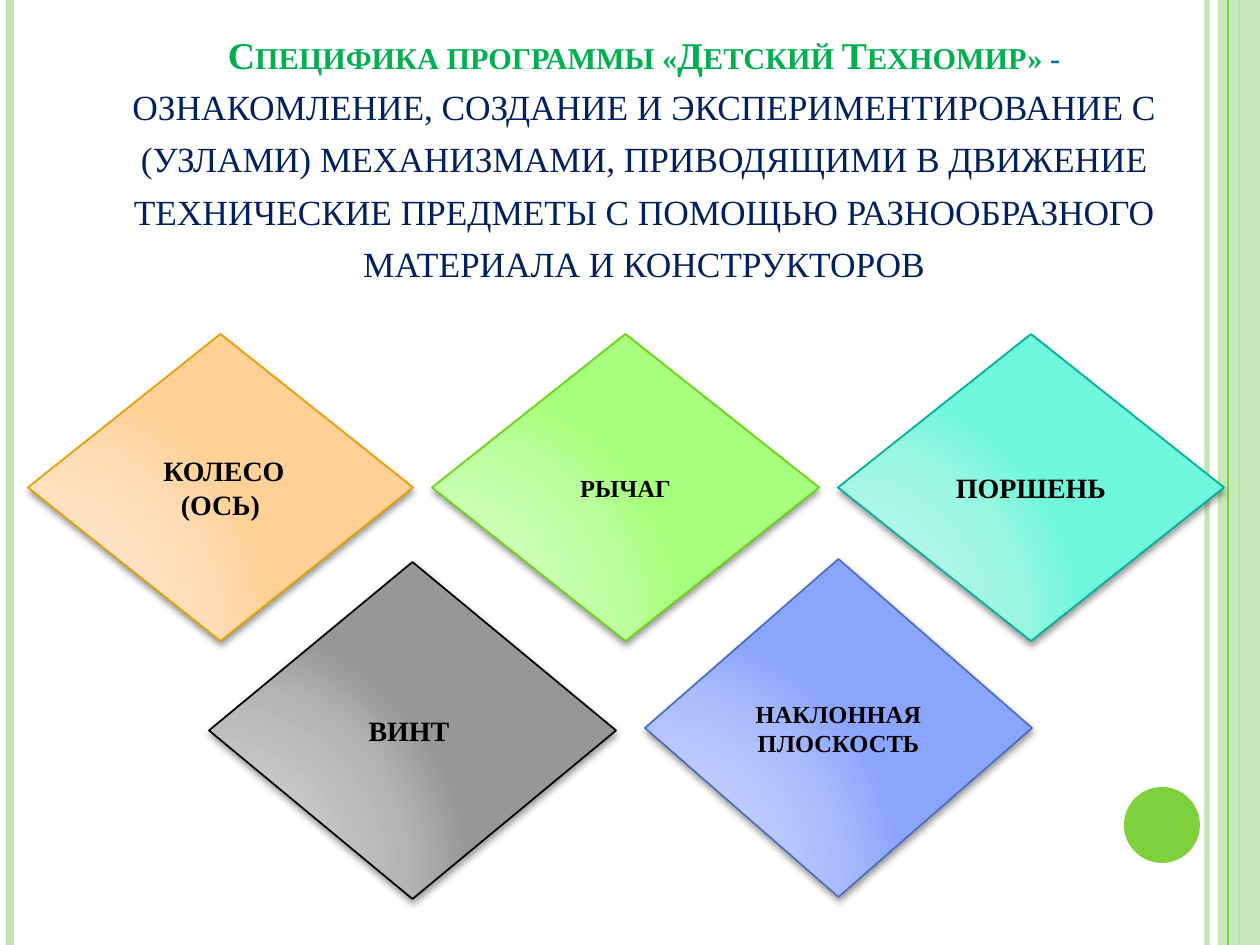
from lxml import etree
from pptx import Presentation
from pptx.dml.color import RGBColor as RGB
from pptx.enum.shapes import MSO_CONNECTOR as CONN, MSO_SHAPE as SHAPE
from pptx.enum.text import MSO_ANCHOR as ANCHOR, MSO_AUTO_SIZE as AUTO, PP_ALIGN as ALIGN
from pptx.oxml import parse_xml
from pptx.oxml.ns import nsdecls, qn
from pptx.util import Pt

PX = 914400 / 126
FONT = "Times New Roman"


def emu(*vals):
    return [round(v * PX) for v in vals]


def paint(color, code, alpha=None):
    """Set a colour format from a hex string, with opacity in percent."""
    color.rgb = RGB.from_string(code)
    if alpha:
        for clr in color._xFill.iter(qn("a:srgbClr")):
            etree.SubElement(clr, qn("a:alpha"), val=str(alpha * 1000))


prs = Presentation()
prs.slide_width, prs.slide_height = emu(1260, 945)
slide = prs.slides.add_slide(prs.slide_layouts[5])
shapes = slide.shapes

# Side stripes: x, colour, width in points, opacity
stripes = [(1207, "C0E5AF", 3, 93), (10, "C0E5AF", 4.5, None),
           (1239, "7FD13B", 1.5, None), (1228, "7FD13B", 0.75, None)]
for x, code, width, alpha in stripes:
    if x == 1228:  # the band lies under the last stripe only
        band = shapes.add_shape(SHAPE.RECTANGLE, *emu(1218, 0, 42, 945))
        band.shadow.inherit = False
        band.fill.solid()
        paint(band.fill.fore_color, "C0E5AF", 87)
        band.line.fill.background()
    line = shapes.add_connector(CONN.STRAIGHT, *emu(x, 0, x, 945))
    line.line.width = Pt(width)
    line.line.fill.solid()
    paint(line.line.color, code, alpha)
    etree.SubElement(line._element.spPr, qn("a:effectLst"))

dot = shapes.add_shape(SHAPE.OVAL, *emu(1124, 787, 76, 76))
dot.shadow.inherit = False
dot.fill.solid()
paint(dot.fill.fore_color, "7FD13B")
dot.line.fill.background()

# Title
title = shapes.title
title.left, title.top, title.width, title.height = emu(63, 16, 1162, 277)
frame = title.text_frame
frame.word_wrap = True
frame.auto_size = AUTO.NONE
frame.vertical_anchor = ANCHOR.BOTTOM
para = frame.paragraphs[0]
para.alignment = ALIGN.CENTER
para.line_spacing = Pt(30)
parts = [
    ("Специфика программы «Детский Техномир» ", 21.6, "00B050", True),
    ("- ", 21.6, "0070C0", True),
    ("ознакомление, создание и экспериментирование с (узлами) механизмами, "
     "приводящими в движение технические предметы с помощью разнообразного "
     "материала и конструкторов", 25.2, "002060", False),
]
for text, size, code, bold in parts:
    run = para.add_run()
    run.text = text
    run.font.name = FONT
    run.font.size = Pt(size)
    run.font.bold = bold
    paint(run.font.color, code)
    run.font._element.set("cap", "small")

# Diamonds: text, size, box, outline, gradient colours
diamonds = [
    (" КОЛЕСО (ОСЬ)", 16, (28, 334, 385, 307), "E2A100", "FFE9D3 FFE7CF FFDCB4 FFD196"),
    ("РЫЧАГ", 14, (432, 334, 387, 307), "6AD312", "D7FFC6 D3FFC1 BDFFA0 A8FF7D"),
    ("ПОРШЕНЬ", 16, (838, 334, 386, 307), "00B099", "C3F8EC BDF8EB 98F6E1 6EF7DB"),
    ("ВИНТ ", 16, (209, 562, 407, 337), "000000", "D3D3D3 CFCFCF B4B4B4 979797"),
    ("НАКЛОННАЯ ПЛОСКОСТЬ", 14, (645, 559, 387, 338), "506EBD", "CCD7FC C8D3FC AABCFC 8BA5FD"),
]
for text, size, box, edge, tones in diamonds:
    gem = shapes.add_shape(SHAPE.DIAMOND, *emu(*box))
    stops = "".join(
        f'<a:gs pos="{pos * 1000}"><a:srgbClr val="{tone}"/></a:gs>'
        for pos, tone in zip((0, 30, 75, 100), tones.split()))
    gem.fill.background()
    props = gem._element.spPr
    props.replace(props.find(qn("a:noFill")), parse_xml(
        f'<a:gradFill {nsdecls("a")} rotWithShape="1"><a:gsLst>{stops}</a:gsLst>'
        '<a:path path="circle"><a:fillToRect l="5000" t="100000" r="120000" b="10000"/>'
        '</a:path></a:gradFill>'))
    gem.line.width = Pt(1)
    paint(gem.line.color, edge)
    gem.shadow.inherit = False
    props.find(qn("a:effectLst")).append(parse_xml(
        f'<a:outerShdw {nsdecls("a")} blurRad="{Pt(4)}" dist="{Pt(2)}" dir="5400000" '
        'rotWithShape="0"><a:srgbClr val="000000"><a:alpha val="40000"/></a:srgbClr>'
        '</a:outerShdw>'))
    frame = gem.text_frame
    frame.word_wrap = True
    frame.vertical_anchor = ANCHOR.MIDDLE
    para = frame.paragraphs[0]
    para.text = text
    para.alignment = ALIGN.CENTER
    para.font.name = FONT
    para.font.size = Pt(size)
    para.font.bold = True
    paint(para.font.color, "000000")

prs.save("out.pptx")
